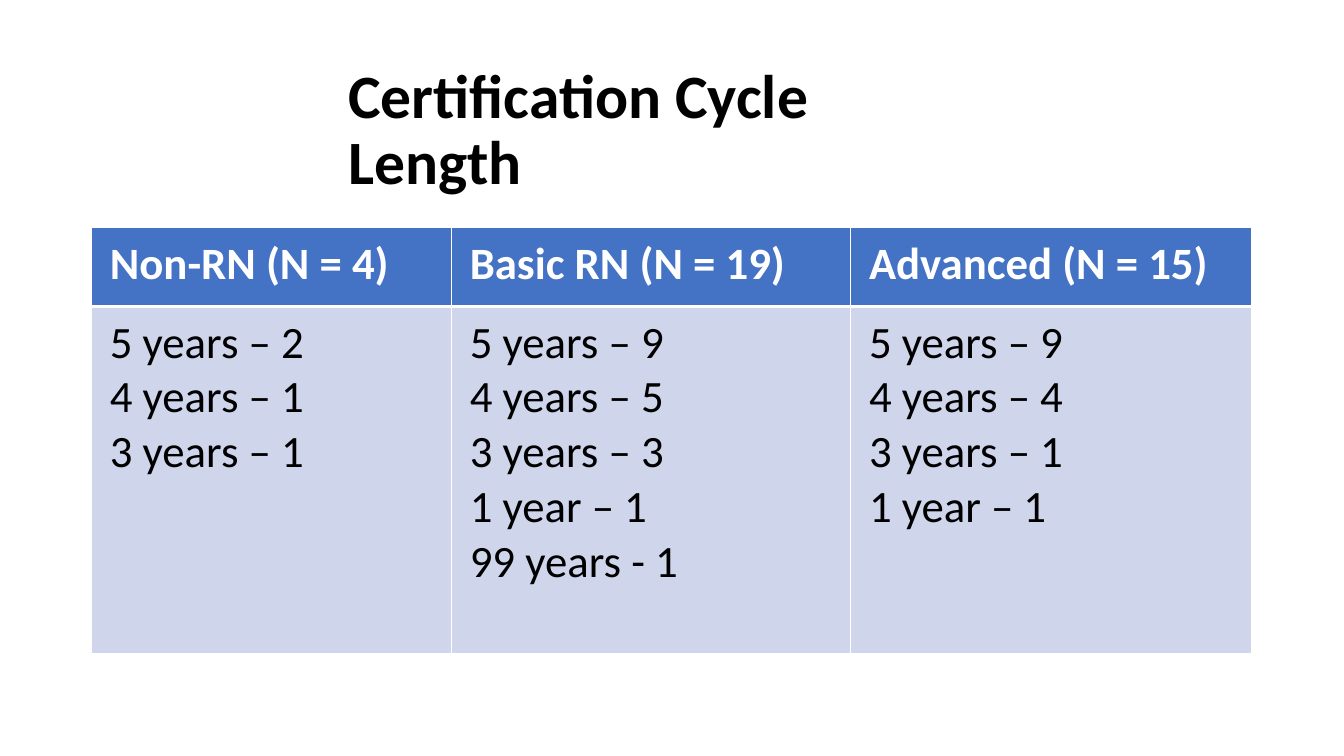
"""Build the certification cycle length slide."""
from pptx import Presentation
from pptx.dml.color import RGBColor
from pptx.enum.text import MSO_ANCHOR
from pptx.oxml import parse_xml
from pptx.oxml.ns import nsdecls
from pptx.util import Cm, Pt

BLACK = RGBColor(0x00, 0x00, 0x00)
WHITE = RGBColor(0xFF, 0xFF, 0xFF)
BLUE = RGBColor(0x44, 0x72, 0xC4)
PALE_BLUE = RGBColor(0xCF, 0xD5, 0xEA)

TITLE_FONT = {"name": "Calibri", "size": Pt(44), "bold": True}
HEADER_FONT = {"name": "Calibri", "size": Pt(32), "bold": True}
BODY_FONT = {"name": "Calibri", "size": Pt(32), "bold": False}
CELL_MARGINS = {"margin_left": Cm(0.46), "margin_right": Cm(0.46),
                "margin_top": Cm(0.23), "margin_bottom": Cm(0.23)}

GROUPS = [
    ("Non-RN (N = 4)", Cm(9.07),
     ["5 years – 2", "4 years – 1", "3 years – 1"]),
    ("Basic RN (N = 19)", Cm(10.06),
     ["5 years – 9", "4 years – 5", "3 years – 3", "1 year – 1", "99 years - 1"]),
    ("Advanced (N = 15)", Cm(10.11),
     ["5 years – 9", "4 years – 4", "3 years – 1", "1 year – 1"]),
]


def write(p, text, font, color):
    r = p.add_run()
    r.text = text
    for name, value in font.items():
        setattr(r.font, name, value)
    r.font.color.rgb = color


def fill_cell(cell, lines, font, color, fill, borders):
    for name, value in CELL_MARGINS.items():
        setattr(cell, name, value)
    tcPr = cell._tc.get_or_add_tcPr()
    for side, width in borders.items():
        tcPr.append(parse_xml(
            f'<a:ln{side} {nsdecls("a")} w="{Pt(width)}"><a:solidFill>'
            f'<a:srgbClr val="{WHITE}"/></a:solidFill></a:ln{side}>'))
    cell.fill.solid()
    cell.fill.fore_color.rgb = fill
    tf = cell.text_frame
    for i, line in enumerate(lines):
        p = tf.add_paragraph() if i else tf.paragraphs[0]
        write(p, line, font, color)


prs = Presentation()
prs.slide_width, prs.slide_height = Cm(33.87), Cm(19.05)
s = prs.slides.add_slide(prs.slide_layouts[6])

title = s.shapes.add_textbox(Cm(8.53), Cm(1.47), Cm(16.76), Cm(3.68))
tf = title.text_frame
tf.word_wrap = True
tf.vertical_anchor = MSO_ANCHOR.MIDDLE
p = tf.paragraphs[0]
p.line_spacing = 0.9
write(p, "Certification Cycle Length", TITLE_FONT, BLACK)

row_heights = [Cm(1.98), Cm(8.76)]
table = s.shapes.add_table(
    len(row_heights), len(GROUPS), Cm(2.31), Cm(5.74),
    sum(width for _, width, _ in GROUPS), sum(row_heights)).table
for row, height in zip(table.rows, row_heights):
    row.height = height

for col, (heading, width, cycles) in enumerate(GROUPS):
    table.columns[col].width = width
    fill_cell(table.cell(0, col), [heading], HEADER_FONT, WHITE, BLUE,
              {"L": 1, "R": 1, "T": 1, "B": 3})
    fill_cell(table.cell(1, col), cycles, BODY_FONT, BLACK, PALE_BLUE,
              {"L": 1, "R": 1, "T": 3, "B": 1})

prs.save("out.pptx")
